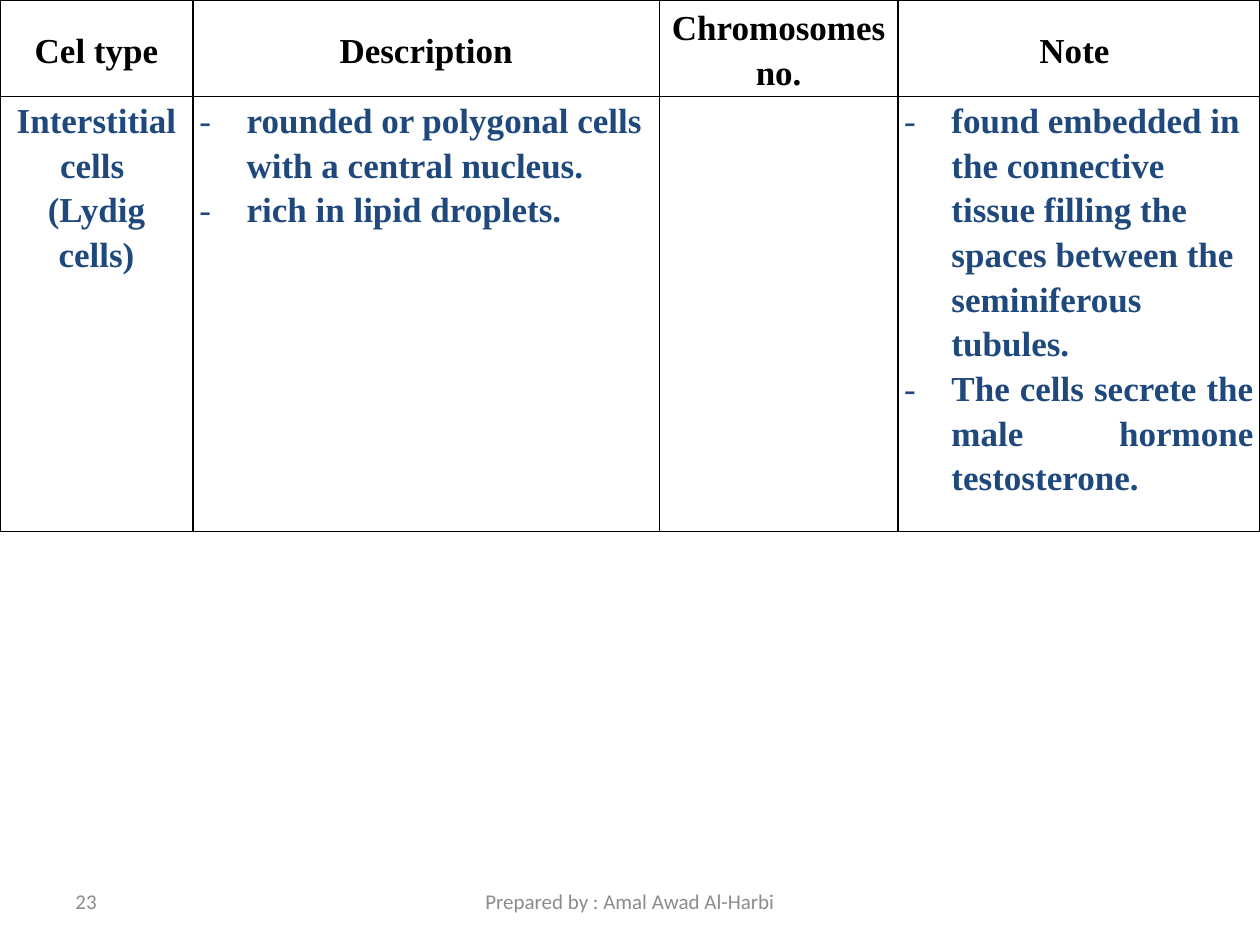
from lxml import etree
from pptx import Presentation
from pptx.dml.color import RGBColor
from pptx.enum.text import MSO_ANCHOR, PP_ALIGN
from pptx.oxml.ns import qn
from pptx.util import Pt

LEFT, CENTER, JUSTIFY = PP_ALIGN.LEFT, PP_ALIGN.CENTER, PP_ALIGN.JUSTIFY
TOP, MIDDLE = MSO_ANCHOR.TOP, MSO_ANCHOR.MIDDLE
BLACK = RGBColor(0x00, 0x00, 0x00)
NAVY = RGBColor(0x1F, 0x49, 0x7D)
GRAY = RGBColor(0x8C, 0x8C, 0x8C)
TABLE_FONT, FOOTER_FONT = "Times New Roman", "Calibri"

HEADERS = ["Cel type", "Description", "Chromosomes no.", "Note "]
# Each cell is a list of (text, alignment, bulleted)
DETAILS = [
    [("Interstitial cells ", CENTER, False), ("(Lydig cells)", CENTER, False)],
    [("rounded or polygonal cells with a central nucleus.", LEFT, True),
     ("rich in lipid droplets.", LEFT, True)],
    [],
    [("found embedded in the connective tissue filling the spaces between "
      "the seminiferous tubules.", LEFT, True),
     ("The cells secrete the male hormone testosterone.", JUSTIFY, True)],
]
ROWS = [
    # height, anchor, colour, cells
    (55.2, MIDDLE, BLACK, [[(header, CENTER, False)] for header in HEADERS]),
    (248.6, TOP, NAVY, DETAILS),
]
COLUMN_WIDTHS = [110.3, 266.5, 136.3, 206.9]
FOOTERS = [
    # text, left, width, alignment
    ("23", 36, 168, LEFT),
    ("Prepared by : Amal Awad Al-Harbi", 246, 228, CENTER),
]
FOOTER_TOP, FOOTER_HEIGHT = 500.5, 28.75
BULLET_INDENT = 27


def add_span(para, text, font_name, size, color, bold=False):
    span = para.add_run()
    span.text = text
    span.font.name = font_name
    span.font.size = Pt(size)
    span.font.bold = bold
    span.font.color.rgb = color


def add_dash(para):
    """Give the paragraph a hanging dash bullet."""
    properties = para._p.get_or_add_pPr()
    properties.set("marL", str(Pt(BULLET_INDENT)))
    properties.set("indent", str(-Pt(BULLET_INDENT)))
    etree.SubElement(properties, qn("a:buFont"), typeface=TABLE_FONT)
    etree.SubElement(properties, qn("a:buChar"), char="-")


def add_borders(cell):
    properties = cell._tc.get_or_add_tcPr()
    for side in ("lnL", "lnR", "lnT", "lnB"):
        line = etree.SubElement(properties, qn(f"a:{side}"), w=str(Pt(1)))
        fill = etree.SubElement(line, qn("a:solidFill"))
        etree.SubElement(fill, qn("a:srgbClr"), val=str(BLACK))


def fill_cell(cell, paragraphs, anchor, color):
    add_borders(cell)
    cell.fill.background()
    cell.vertical_anchor = anchor
    cell.margin_left = cell.margin_right = Pt(3.6)
    cell.margin_top = cell.margin_bottom = Pt(0)
    for index, (text, alignment, bulleted) in enumerate(paragraphs):
        frame = cell.text_frame
        para = frame.add_paragraph() if index else frame.paragraphs[0]
        para.alignment = alignment
        para.line_spacing = 1.15
        if bulleted:
            add_dash(para)
        add_span(para, text, TABLE_FONT, 20, color, bold=True)


def add_cell_table(page):
    height = sum(row[0] for row in ROWS)
    table = page.shapes.add_table(
        len(ROWS), len(COLUMN_WIDTHS), Pt(0), Pt(0),
        Pt(sum(COLUMN_WIDTHS)), Pt(height)).table
    table.first_row = table.horz_banding = False
    for column, width in zip(table.columns, COLUMN_WIDTHS):
        column.width = Pt(width)
    for row, (row_height, anchor, color, cells) in zip(table.rows, ROWS):
        row.height = Pt(row_height)
        for cell, paragraphs in zip(row.cells, cells):
            fill_cell(cell, paragraphs, anchor, color)


def add_footer(page, text, left, width, alignment):
    box = page.shapes.add_textbox(
        Pt(left), Pt(FOOTER_TOP), Pt(width), Pt(FOOTER_HEIGHT))
    frame = box.text_frame
    frame.word_wrap = True
    frame.vertical_anchor = MIDDLE
    para = frame.paragraphs[0]
    para.alignment = alignment
    add_span(para, text, FOOTER_FONT, 12, GRAY)


def main():
    deck = Presentation()
    deck.slide_width, deck.slide_height = Pt(720), Pt(540)
    page = deck.slides.add_slide(deck.slide_layouts[6])
    add_cell_table(page)
    for footer in FOOTERS:
        add_footer(page, *footer)
    deck.save("out.pptx")


if __name__ == "__main__":
    main()
